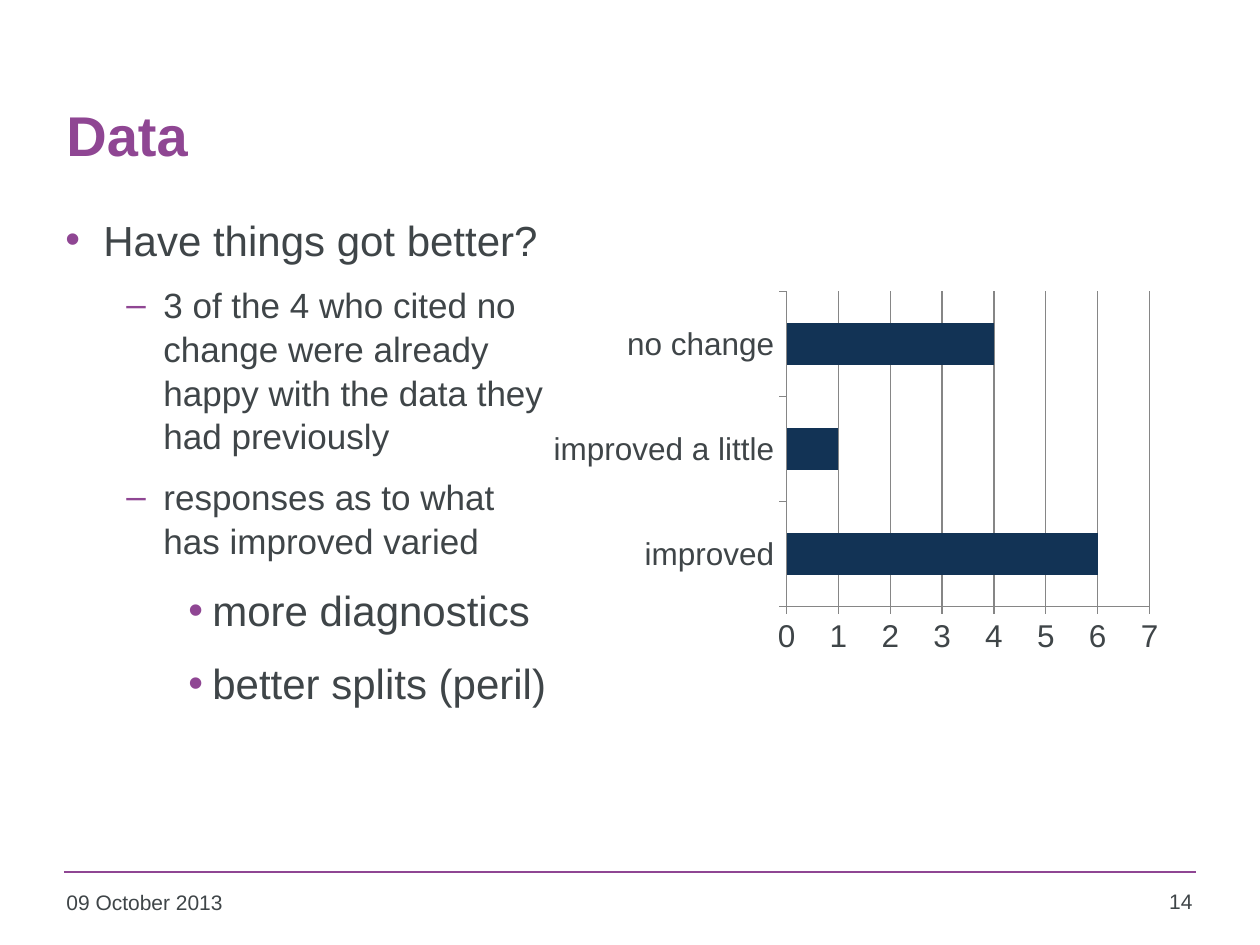
import pptx
import pptx.chart.data
import pptx.dml.color
import pptx.enum.chart
import pptx.enum.shapes
import pptx.enum.text
import pptx.util
from dataclasses import dataclass
from lxml import etree
from pptx.oxml.ns import qn

EMU_PER_PX = 914400 / 126


def px(length):
    return pptx.util.Emu(round(length * EMU_PER_PX))


def rgb(value):
    return pptx.dml.color.RGBColor.from_string(value)


@dataclass(frozen=True)
class Theme:
    font: str = "Arial"
    accent: str = "8F4693"
    text: str = "3F4548"
    bar: str = "123355"
    grid: str = "868686"
    title_size: int = 32
    large_size: int = 24
    medium_size: int = 20
    chart_size: int = 18
    footer_size: int = 12


class SlideBuilder:
    def __init__(self, slide, theme):
        self.slide = slide
        self.theme = theme

    def style_font(self, font, size, color, bold=False):
        font.name = self.theme.font
        font.size = pptx.util.Pt(size)
        font.bold = bold
        font.color.rgb = rgb(color)

    def text_box(self, left, top, width, height):
        shape = self.slide.shapes.add_textbox(px(left), px(top), px(width), px(height))
        shape.text_frame.word_wrap = True
        return shape.text_frame

    def label(self, text, box, size, color, bold=False,
              align=pptx.enum.text.PP_ALIGN.LEFT,
              anchor=pptx.enum.text.MSO_ANCHOR.TOP):
        text_frame = self.text_box(*box)
        text_frame.text = text
        text_frame.vertical_anchor = anchor
        paragraph = text_frame.paragraphs[0]
        paragraph.alignment = align
        self.style_font(paragraph.runs[0].font, size, color, bold)

    def bullet_list(self, items, box, levels):
        """Items are (level, size, text); levels are (bullet, margin, hanging) in px."""
        text_frame = self.text_box(*box)
        text_frame.text = "\n".join(text for _, _, text in items)
        for paragraph, (level, size, _) in zip(text_frame.paragraphs, items):
            paragraph.level = level
            paragraph.line_spacing = 1.04
            paragraph.space_before = pptx.util.Pt(size / 2)
            self.style_font(paragraph.runs[0].font, size, self.theme.text)
            self.add_bullet(paragraph, *levels[level])

    def add_bullet(self, paragraph, bullet, margin, hanging):
        properties = paragraph._p.get_or_add_pPr()
        properties.set("marL", str(px(margin)))
        properties.set("indent", str(-px(hanging)))
        color = etree.SubElement(properties, qn("a:buClr"))
        etree.SubElement(color, qn("a:srgbClr"), val=self.theme.accent)
        etree.SubElement(properties, qn("a:buFont"), typeface=self.theme.font)
        etree.SubElement(properties, qn("a:buChar"), char=bullet)

    def rule(self, left, right, y):
        connector = self.slide.shapes.add_connector(
            pptx.enum.shapes.MSO_CONNECTOR.STRAIGHT, px(left), px(y), px(right), px(y))
        connector.line.color.rgb = rgb(self.theme.accent)
        connector.line.width = pptx.util.Pt(1)
        etree.SubElement(connector._element.spPr, qn("a:effectLst"))

    def bar_chart(self, categories, values, box):
        data = pptx.chart.data.CategoryChartData()
        data.categories = categories
        data.add_series("Series 1", values)
        chart = self.slide.shapes.add_chart(
            pptx.enum.chart.XL_CHART_TYPE.BAR_CLUSTERED, *map(px, box), data).chart
        chart.has_legend = False
        chart.has_title = False
        self.style_font(chart.font, self.theme.chart_size, self.theme.text)

        plot = chart.plots[0]
        plot.gap_width = 150
        plot.vary_by_categories = False
        fill = plot.series[0].format.fill
        fill.solid()
        fill.fore_color.rgb = rgb(self.theme.bar)

        value_axis = chart.value_axis
        value_axis.minimum_scale, value_axis.maximum_scale = 0, 7
        value_axis.major_unit = 1
        value_axis.has_major_gridlines = True
        lines = [value_axis.major_gridlines.format.line]
        for axis in (chart.category_axis, value_axis):
            axis.major_tick_mark = pptx.enum.chart.XL_TICK_MARK.OUTSIDE
            lines.append(axis.format.line)
        for line in lines:
            line.color.rgb = rgb(self.theme.grid)
            line.width = pptx.util.Pt(0.75)


def main():
    presentation = pptx.Presentation()
    presentation.slide_width = px(1260)
    presentation.slide_height = px(945)
    theme = Theme()
    slide = presentation.slides.add_slide(presentation.slide_layouts[6])
    builder = SlideBuilder(slide, theme)

    builder.rule(64, 1196, 872)
    builder.label("Data", (54, 55, 1143, 158), theme.title_size, theme.accent,
                  bold=True, anchor=pptx.enum.text.MSO_ANCHOR.MIDDLE)
    builder.label("09 October 2013", (54, 883, 277, 45), theme.footer_size, theme.text)
    builder.label("14", (1116, 882, 89, 47), theme.footer_size, theme.text,
                  align=pptx.enum.text.PP_ALIGN.RIGHT)
    builder.bullet_list(
        [
            (0, theme.large_size, "Have things got better?"),
            (1, theme.medium_size, "3 of the 4 who cited no change were already "
                                   "happy with the data they had previously"),
            (1, theme.medium_size, "responses as to what has improved varied"),
            (2, theme.large_size, "more diagnostics"),
            (2, theme.large_size, "better splits (peril)"),
        ],
        box=(53, 206, 508, 639),
        levels=[("•", 38, 38), ("–", 98, 37), ("•", 147, 24)],
    )
    builder.bar_chart(["improved", "improved a little", "no change"], [6, 1, 4],
                      (541, 284, 630, 378))
    presentation.save("out.pptx")


if __name__ == "__main__":
    main()
